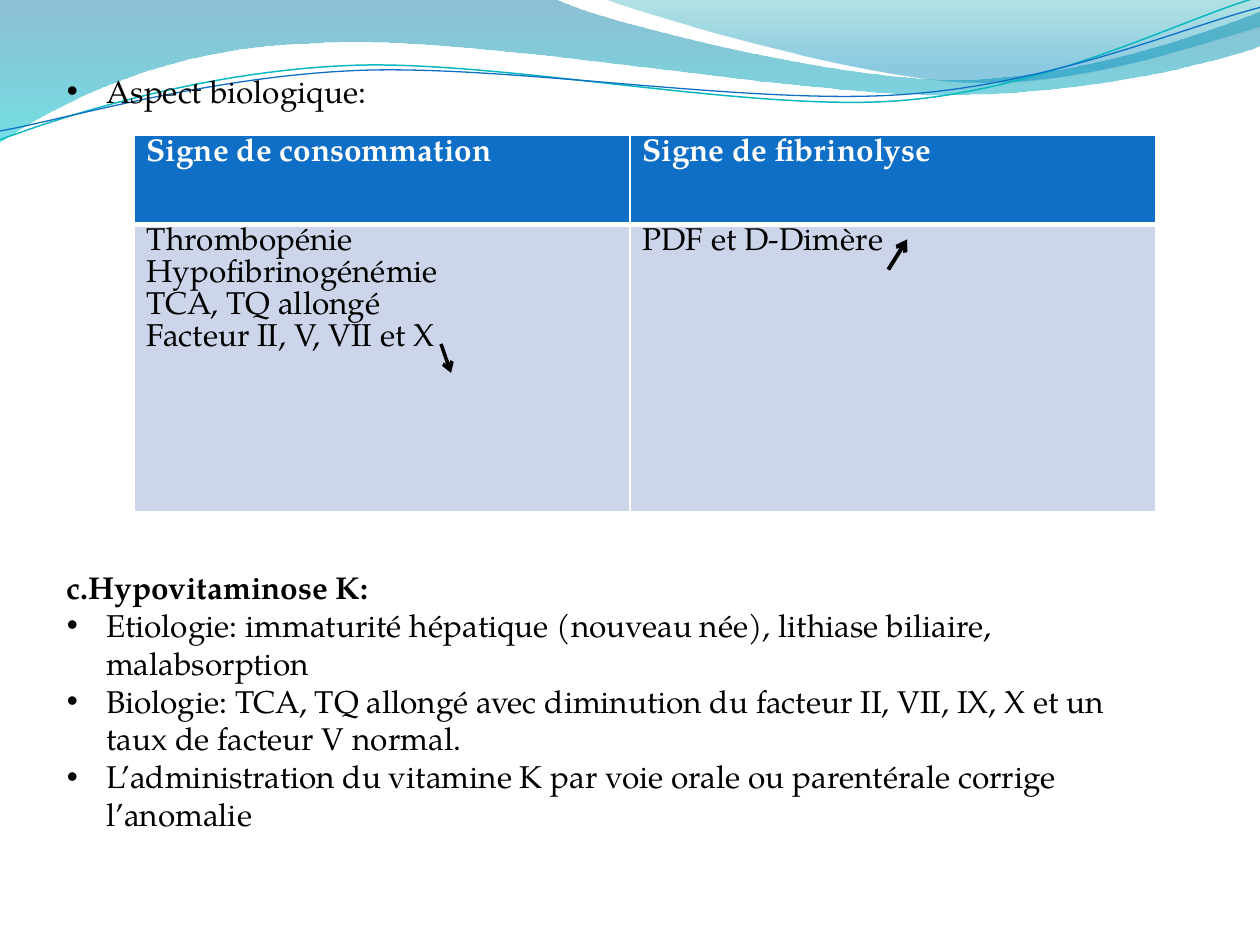
from math import cos, radians, sin

from lxml.etree import SubElement as Sub
from pptx import Presentation
from pptx.dml.color import RGBColor as RGB
from pptx.enum.shapes import MSO_CONNECTOR as Link
from pptx.oxml.ns import qn
from pptx.util import Inches, Pt

FONT = "TeX Gyre Pagella"
COLORS = {
    "ink": "000000", "white": "FFFFFF", "head": "0F6FC6", "cell": "CCD5EA",
    "teal": "0AB8BF", "deep": "0074A1", "aqua": "00C6CF",
    "sea": "00A1A9", "sky": "008BBF",
}

# Each outline is a start point, then lines (2 numbers) or curves (6).
BAND = [(0, 0), (44, -0.1), (47.6, 1.7, 66.4, 6.3, 75.8, 6.3),
        (85.3, 6.3, 95.8, 2.6, 100, 0.9), (100.1, 3.6),
        (98.3, 4.4, 87, 7.6, 74.6, 7.5), (62.2, 7.5, 38.2, 2.8, 25.7, 3.4),
        (12.9, 3.6, 4.6, 8.3, -0.1, 11.3), (0, 0)]
CREST = [(47.9, -0.1), (50.9, 1.1, 68.2, 6.2, 76.9, 6.5),
         (85.6, 6.9, 96.1, 3.2, 100, 2.1), (100, 0), (47.9, -0.1)]
TEAL = [(0, 11.1), (4.8, 9.3, 15.8, 5.7, 27.7, 5.2),
        (39.5, 4.7, 59.3, 8.9, 71.3, 8), (83.3, 7.1, 93.8, 1.5, 99.8, -0.2)]
BLUE = [(0, 10.4), (4.7, 9.6, 16.4, 6.1, 28.3, 5.6),
        (40.3, 5.1, 59.7, 8.4, 71.7, 7.5), (83.6, 6.7, 94.1, 2.1, 100, 0.6)]
TILT = -2.7

SIGNS = [
    ["Signe de consommation", "Signe de fibrinolyse"],
    ["Thrombopénie\nHypofibrinogénémie\nTCA, TQ allongé\nFacteur II, V, VII et X",
     "PDF et D-Dimère"],
]
CAUSES = [
    "Etiologie: immaturité hépatique (nouveau née), lithiase biliaire, malabsorption",
    "Biologie: TCA, TQ allongé avec diminution du facteur II, VII, IX, X et un "
    "taux de facteur V normal.",
    "L’administration du vitamine K par voie orale ou parentérale corrige l’anomalie",
]


def tint(name):
    return RGB.from_string(COLORS[name])


def pairs(part):
    return list(zip(part[::2], part[1::2]))


def level(path, angle):
    """Turn a path back by an angle about the middle of its ends."""
    (ax, ay), (bx, by) = path[0], path[-1][-2:]
    mx, my = (ax + bx) / 2, (ay + by) / 2
    c, s = cos(radians(-angle)), sin(radians(-angle))
    return [[v for x, y in pairs(part)
             for v in (mx + (x - mx) * c - (y - my) * s,
                       my + (x - mx) * s + (y - my) * c)]
            for part in path]


class Page:
    """Draws on one slide, on a grid of 100 columns by 75 rows."""

    def __init__(self, deck):
        self.slide = deck.slides.add_slide(deck.slide_layouts[3])
        self.shapes = self.slide.shapes
        self.unit = deck.slide_width / 100
        title = self.shapes.title._element
        title.getparent().remove(title)

    def grid(self, *values):
        return [round(v * self.unit) for v in values]

    def style(self, para, color="ink", bold=False):
        font = para.font
        font.name, font.size, font.bold = FONT, Pt(18), bold
        font.color.rgb = tint(color)

    def outline(self, path, closed):
        """Build straight sides, then bend those that have control points."""
        ends = [self.grid(*part[-2:]) for part in path]
        pen = self.shapes.build_freeform(*ends[0], scale=1.0)
        pen.add_line_segments(ends[1:], close=closed)
        shape = pen.convert_to_shape()
        shape.shadow.inherit = False
        sides = list(shape._element.iter(qn("a:lnTo")))
        for side, part in zip(sides, path[1:]):
            if len(part) == 6:
                bend = side.makeelement(qn("a:cubicBezTo"))
                for point in pairs(part):
                    x, y = self.grid(*point)
                    Sub(bend, qn("a:pt"), x=str(x - shape.left), y=str(y - shape.top))
                side.getparent().replace(side, bend)
        return shape

    def wave(self, path, stops):
        """Fill an outline from top to bottom; stops are (place, color, opacity)."""
        shape = self.outline(path, True)
        shape.line.fill.background()
        shape.fill.gradient()
        shape.fill.gradient_angle = 270
        for stop, (place, color, solid) in zip(shape.fill.gradient_stops, stops):
            stop.position = place
            stop.color.rgb = tint(color)
            for node in shape._element.iter(qn("a:srgbClr")):
                if node.get("val") == COLORS[color]:
                    Sub(node, qn("a:alpha"), val=str(solid * 1000))

    def curve(self, path, color, width):
        shape = self.outline(level(path, TILT), False)
        shape.rotation = TILT
        shape.fill.background()
        shape.line.color.rgb = tint(color)
        shape.line.width = Pt(width)

    def body(self, index, box, items, head=None):
        """Fill a body placeholder with a bold heading and bullets, in front."""
        holder = self.slide.placeholders[index]
        holder.left, holder.top, holder.width, holder.height = self.grid(*box)
        self.shapes._spTree.append(holder._element)
        frame = holder.text_frame
        frame.text = "\n".join(([head] if head else []) + items)
        for i, para in enumerate(frame.paragraphs):
            top = bool(head) and i == 0
            para.space_before = Pt(0)
            props = para._p.get_or_add_pPr()
            hang = 0 if top else Pt(22.5)
            props.set("marL", str(hang))
            props.set("indent", str(-hang))
            if top:
                Sub(props, qn("a:buNone"))
            else:
                Sub(props, qn("a:buFont"), typeface="Arial")
                Sub(props, qn("a:buChar"), char="•")
            self.style(para, bold=top)

    def edge(self, cell, top, bottom):
        """Draw white borders round a cell."""
        props = cell._tc.get_or_add_tcPr()
        widths = {"L": 1, "R": 1, "T": top, "B": bottom}
        for i, (side, width) in enumerate(widths.items()):
            line = props.makeelement(qn("a:ln" + side), w=str(Pt(width)))
            Sub(Sub(line, qn("a:solidFill")), qn("a:srgbClr"), val=COLORS["white"])
            props.insert(i, line)

    def table(self, box, cols, rows, texts):
        grid = self.shapes.add_table(len(rows), len(cols), *self.grid(*box)).table
        for col, width in zip(grid.columns, self.grid(*cols)):
            col.width = width
        for row, height, words in zip(grid.rows, self.grid(*rows), texts):
            row.height = height
            top = words is texts[0]
            for cell, text in zip(row.cells, words):
                cell.fill.solid()
                cell.fill.fore_color.rgb = tint("head" if top else "cell")
                self.edge(cell, *((1, 3) if top else (3, 1)))
                cell.margin_left = cell.margin_right = Inches(0.1)
                cell.margin_top = cell.margin_bottom = Inches(0.03)
                cell.text = text
                for para in cell.text_frame.paragraphs:
                    self.style(para, "white" if top else "ink", top)

    def arrow(self, start, end, width):
        link = self.shapes.add_connector(Link.STRAIGHT, *self.grid(*start, *end))
        link.line.color.rgb = tint("ink")
        link.line.width = Pt(width)
        Sub(link.line._get_or_add_ln(), qn("a:tailEnd"), type="arrow")
        Sub(link._element.spPr, qn("a:effectLst"))


def main():
    deck = Presentation()
    deck.slide_width, deck.slide_height = Inches(10), Inches(7.5)
    page = Page(deck)
    page.wave(BAND, [(0, "deep", 45), (1, "aqua", 55)])
    page.wave(CREST, [(0, "sea", 30), (0.8, "sky", 45)])
    page.curve(TEAL, "teal", 0.85)
    page.curve(BLUE, "head", 0.75)
    page.body(1, (4.3, 5.2, 88.2, 4), ["Aspect biologique:"])
    page.table((10.65, 10.7, 81.1, 29.9), (39.35, 41.7), (7.1, 22.8), SIGNS)
    page.arrow((35, 27.3), (35.8, 29.6), 2)
    page.arrow((70.5, 21.4), (72, 19), 2.25)
    page.body(2, (4.3, 44.6, 89.8, 16.2), CAUSES, "c.Hypovitaminose K:")
    deck.save("out.pptx")


if __name__ == "__main__":
    main()
